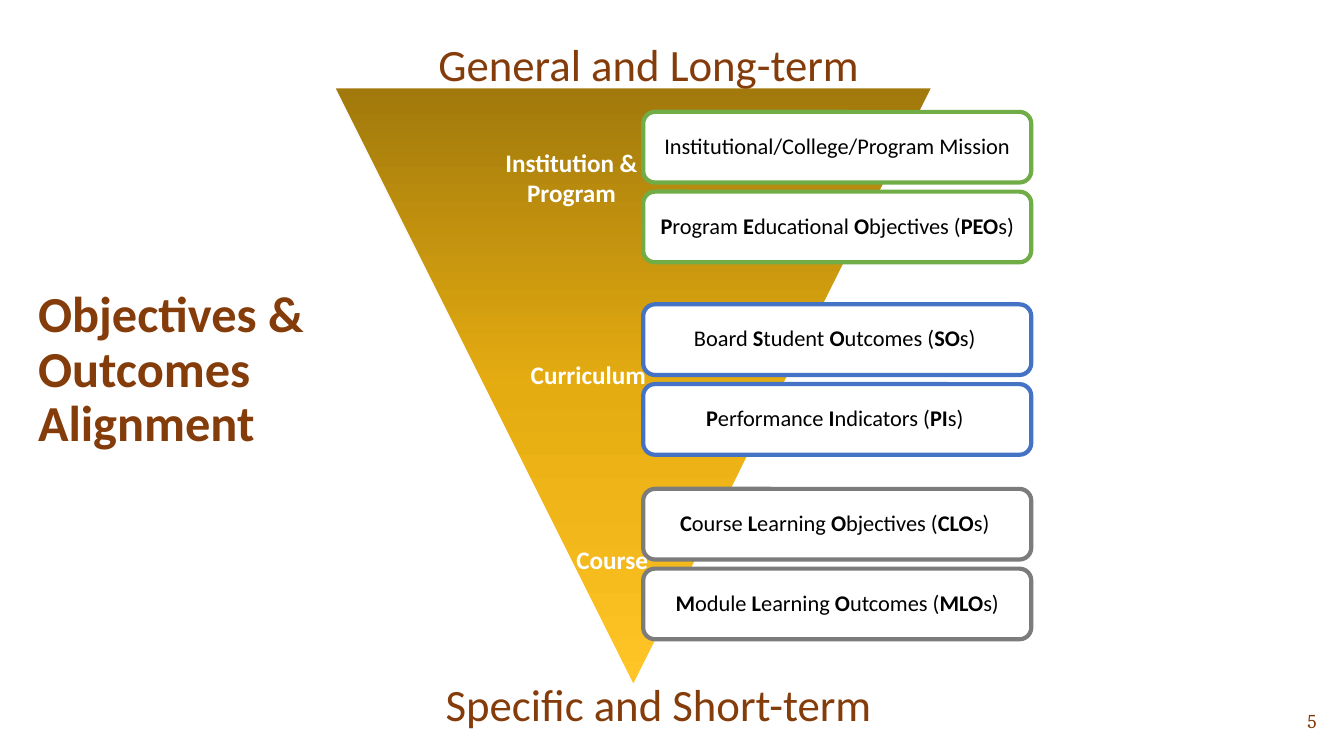
import copy
from dataclasses import dataclass

import pptx
import pptx.dml.color
import pptx.enum.shapes
import pptx.enum.text
import pptx.util
from pptx.util import Cm

ALIGN = pptx.enum.text.PP_ALIGN
ANCHOR = pptx.enum.text.MSO_ANCHOR
SHAPE = pptx.enum.shapes.MSO_SHAPE

BROWN = "843C0B"
WHITE = "FFFFFF"
BLACK = "000000"
BOX_LEFT, BOX_WIDTH, BOX_HEIGHT = 16.21, 9.78, 1.78
BOX_PITCH = 2.01


@dataclass
class Label:
    lines: list[str]
    left: float
    top: float
    width: float
    height: float
    size: int
    color: str = BROWN
    bold: bool = False
    font: str = "Calibri"
    align: ALIGN = ALIGN.CENTER
    anchor: ANCHOR = ANCHOR.TOP
    wrap: bool = False
    line_spacing: float = 1.0


@dataclass
class Level:
    top: float
    color: str
    boxes: list[str]


LABELS = [
    Label(["General and Long-term "], 10.74, 0.79, 11.48, 1.63, 32),
    Label(["Specific and Short-term "], 10.9, 16.94, 11.66, 1.63, 32),
    Label(["Objectives & Outcomes Alignment"], 0.71, 6.17, 8.1, 6.35, 36, bold=True,
          align=ALIGN.LEFT, anchor=ANCHOR.MIDDLE, wrap=True, line_spacing=0.9),
    Label(["Institution & ", "Program "], 12.47, 3.58, 4.01, 1.8, 18, WHITE, True),
    Label(["Curriculum "], 13.11, 8.92, 3.58, 1.02, 18, WHITE, True),
    Label(["Course "], 14.27, 13.59, 2.46, 1.02, 18, WHITE, True),
    Label(["5"], 25.81, 17.65, 7.62, 1.02, 14, font="Cambria",
          align=ALIGN.RIGHT, anchor=ANCHOR.MIDDLE, wrap=True),
]

LEVELS = [
    Level(2.82, "70AD47", [
        "Institutional/College/Program Mission",
        "*P*rogram *E*ducational *O*bjectives (*PEO*s)",
    ]),
    Level(7.67, "4472C4", [
        "Board *S*tudent *O*utcomes (*SO*s) ",
        "*P*erformance *I*ndicators (*PI*s) ",
    ]),
    Level(12.32, "7C7C7C", [
        "*C*ourse *L*earning *O*bjectives (*CLO*s) ",
        "*M*odule *L*earning *O*utcomes (*MLO*s)",
    ]),
]


def rgb(color: str) -> pptx.dml.color.RGBColor:
    return pptx.dml.color.RGBColor.from_string(color)


def add_triangle(slide: pptx.slide.Slide) -> None:
    triangle = slide.shapes.add_shape(
        SHAPE.ISOSCELES_TRIANGLE, Cm(8.43), Cm(2.21), Cm(15.06), Cm(15.06))
    triangle.shadow.inherit = False
    triangle.element.spPr.xfrm.set("flipV", "1")
    triangle.line.color.rgb = rgb(WHITE)
    triangle.line.width = pptx.util.Pt(1)
    triangle.fill.gradient()
    triangle.fill.gradient_angle = 90
    stop_list = triangle.element.spPr.find(".//" + pptx.oxml.ns.qn("a:gsLst"))
    stop_list.append(copy.deepcopy(stop_list[-1]))
    colors = ("A1790C", "E5AC11", "FFC425")
    for index, (stop, color) in enumerate(zip(triangle.fill.gradient_stops, colors)):
        stop.position = index / 2
        stop.color.rgb = rgb(color)


def add_box(slide: pptx.slide.Slide, text: str, top: float, color: str) -> None:
    box = slide.shapes.add_shape(
        SHAPE.ROUNDED_RECTANGLE, Cm(BOX_LEFT), Cm(top), Cm(BOX_WIDTH), Cm(BOX_HEIGHT))
    box.shadow.inherit = False
    box.fill.solid()
    box.fill.fore_color.rgb = rgb(WHITE)
    box.line.color.rgb = rgb(color)
    box.line.width = pptx.util.Pt(3)
    frame = box.text_frame
    frame.word_wrap = True
    frame.vertical_anchor = ANCHOR.MIDDLE
    frame.margin_left = frame.margin_right = Cm(0.2)
    paragraph = frame.paragraphs[0]
    paragraph.alignment = ALIGN.CENTER
    paragraph.line_spacing = 0.9
    paragraph.font.name = "Calibri"
    paragraph.font.size = pptx.util.Pt(16)
    paragraph.font.color.rgb = rgb(BLACK)
    for index, part in enumerate(text.split("*")):
        if part:
            run = paragraph.add_run()
            run.text = part
            run.font.bold = index % 2 == 1


def add_label(slide: pptx.slide.Slide, label: Label) -> None:
    text_box = slide.shapes.add_textbox(
        Cm(label.left), Cm(label.top), Cm(label.width), Cm(label.height))
    frame = text_box.text_frame
    frame.word_wrap = label.wrap
    frame.vertical_anchor = label.anchor
    frame.text = "\n".join(label.lines)
    for paragraph in frame.paragraphs:
        paragraph.alignment = label.align
        paragraph.line_spacing = label.line_spacing
        paragraph.font.name = label.font
        paragraph.font.size = pptx.util.Pt(label.size)
        paragraph.font.bold = label.bold
        paragraph.font.color.rgb = rgb(label.color)


def main() -> None:
    presentation = pptx.Presentation()
    presentation.slide_width = Cm(33.87)
    presentation.slide_height = Cm(19.05)
    slide = presentation.slides.add_slide(presentation.slide_layouts[6])
    add_triangle(slide)
    for level in LEVELS:
        for row, text in enumerate(level.boxes):
            add_box(slide, text, level.top + row * BOX_PITCH, level.color)
    for label in LABELS:
        add_label(slide, label)
    presentation.save("out.pptx")


if __name__ == "__main__":
    main()
